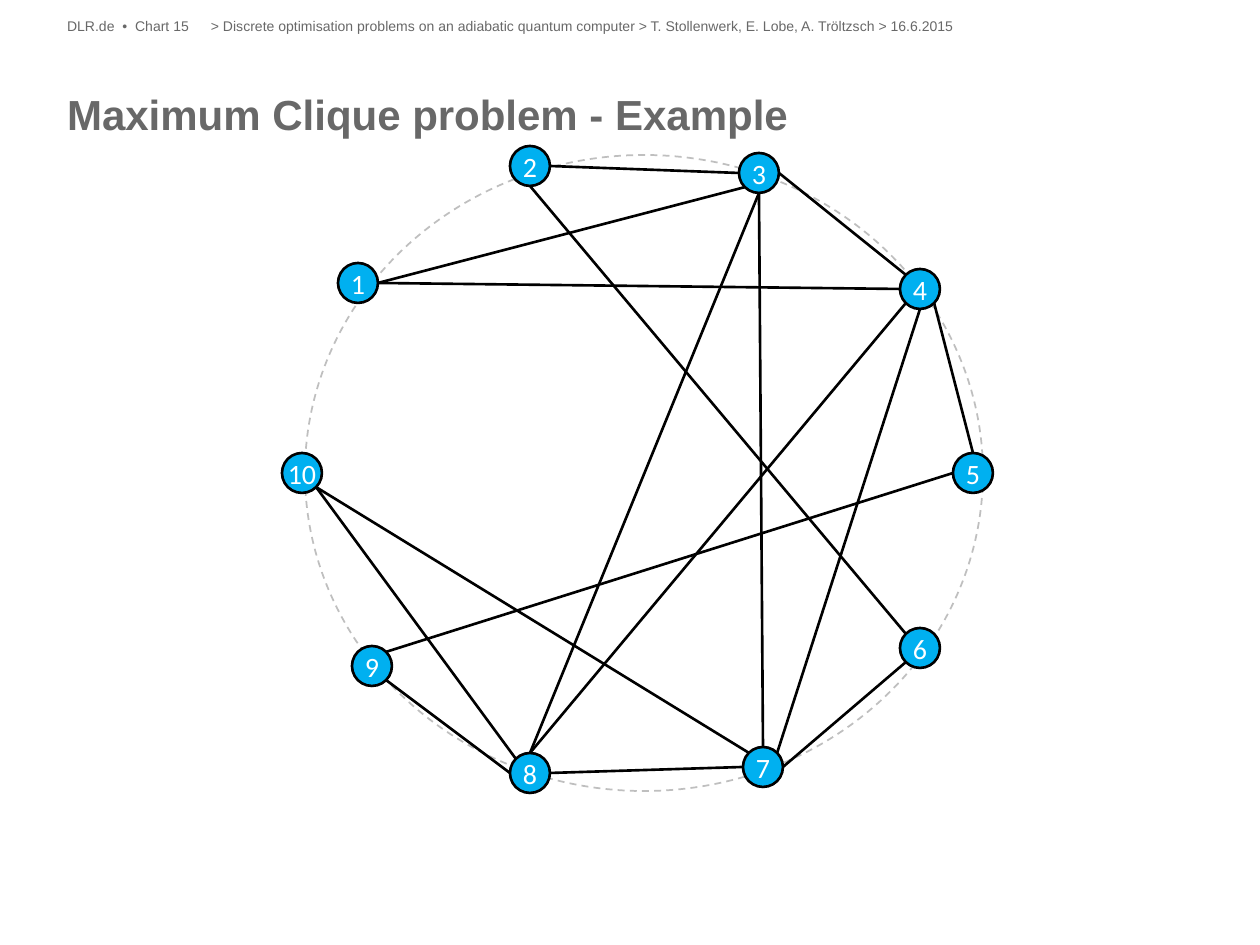
from math import sqrt

from lxml.etree import SubElement
from pptx import Presentation
from pptx.dml.color import RGBColor
from pptx.enum.dml import MSO_LINE
from pptx.enum.shapes import MSO_CONNECTOR, MSO_SHAPE
from pptx.enum.text import MSO_ANCHOR, PP_ALIGN
from pptx.oxml.ns import qn
from pptx.util import Pt

EMU_PER_PX = 914400 / 126
NODE_RADIUS = 20
DIAGONAL = NODE_RADIUS / sqrt(2)

# Points on a node's rim where edges may end, relative to its centre
RIM = {
    "N": (0, -NODE_RADIUS), "S": (0, NODE_RADIUS),
    "W": (-NODE_RADIUS, 0), "E": (NODE_RADIUS, 0),
    "NW": (-DIAGONAL, -DIAGONAL), "NE": (DIAGONAL, -DIAGONAL),
    "SW": (-DIAGONAL, DIAGONAL), "SE": (DIAGONAL, DIAGONAL),
}

NODES = {
    1: (358, 283), 2: (530, 166), 3: (759, 173), 4: (920, 289), 5: (973, 473),
    6: (920, 648), 7: (763, 767), 8: (530, 773), 9: (372, 666), 10: (302, 473),
}

EDGES = [
    (3, "S", 8, "N"), (7, "NE", 4, "S"), (6, "NW", 2, "S"), (2, "E", 3, "W"),
    (6, "SW", 7, "E"), (7, "N", 3, "S"), (7, "W", 8, "E"), (7, "NW", 10, "SE"),
    (8, "N", 4, "SW"), (3, "E", 4, "NW"), (3, "SW", 1, "E"), (1, "E", 4, "W"),
    (4, "SE", 5, "N"), (8, "W", 9, "SE"), (10, "SE", 8, "NW"), (9, "NE", 5, "W"),
]


def px(length):
    return round(length * EMU_PER_PX)


def color(hex_string):
    return RGBColor.from_string(hex_string)


class GraphSlide:
    text_color = "686868"
    node_color = "00B0F0"
    edge_color = "000000"
    ring_color = "BFBFBF"

    def __init__(self, slide):
        self.slide = slide

    def style_font(self, paragraph, size, name, hex_string, bold=False):
        font = paragraph.runs[0].font
        font.size, font.name, font.bold = Pt(size), name, bold
        font.color.rgb = color(hex_string)

    def style_line(self, line, hex_string, width):
        line.color.rgb = color(hex_string)
        line.width = Pt(width)

    def text(self, content, left, top, width, height, size, bold=False):
        box = self.slide.shapes.add_textbox(px(left), px(top), px(width), px(height))
        frame = box.text_frame
        frame.word_wrap = True
        frame.margin_left = frame.margin_right = 0
        frame.margin_top = frame.margin_bottom = 0
        frame.text = content
        self.style_font(frame.paragraphs[0], size, "Arial", self.text_color, bold)

    def ellipse(self, left, top, width, height):
        shape = self.slide.shapes.add_shape(
            MSO_SHAPE.OVAL, px(left), px(top), px(width), px(height))
        shape.shadow.inherit = False
        return shape

    def ring(self, left, top, width, height):
        shape = self.ellipse(left, top, width, height)
        shape.fill.background()
        self.style_line(shape.line, self.ring_color, 1)
        shape.line.dash_style = MSO_LINE.DASH

    def edge(self, start, start_side, end, end_side):
        ends = []
        for node, side in ((start, start_side), (end, end_side)):
            ends += [px(centre + offset) for centre, offset in zip(NODES[node], RIM[side])]
        connector = self.slide.shapes.add_connector(MSO_CONNECTOR.STRAIGHT, *ends)
        self.style_line(connector.line, self.edge_color, 1.5)
        SubElement(connector._element.spPr, qn("a:effectLst"))

    def node(self, number, x, y):
        diameter = 2 * NODE_RADIUS
        shape = self.ellipse(x - NODE_RADIUS, y - NODE_RADIUS, diameter, diameter)
        shape.fill.solid()
        shape.fill.fore_color.rgb = color(self.node_color)
        self.style_line(shape.line, self.edge_color, 1.5)
        frame = shape.text_frame
        frame.word_wrap = False
        frame.vertical_anchor = MSO_ANCHOR.MIDDLE
        frame.text = str(number)
        paragraph = frame.paragraphs[0]
        paragraph.alignment = PP_ALIGN.CENTER
        self.style_font(paragraph, 16, "Calibri", "FFFFFF")


def main():
    presentation = Presentation()
    presentation.slide_width, presentation.slide_height = px(1260), px(945)
    slide = presentation.slides.add_slide(presentation.slide_layouts[6])
    graph = GraphSlide(slide)

    # Title and header line
    graph.text("Maximum Clique problem - Example", 67, 89, 1126, 102, 24, bold=True)
    graph.text("> Discrete optimisation problems on an adiabatic quantum computer > "
               "T. Stollenwerk, E. Lobe, A. Tröltzsch > 16.6.2015", 211, 18, 982, 20, 8)
    graph.text("DLR.de  •  Chart 15", 67, 18, 144, 20, 8)

    # Graph: ring, then edges, then nodes on top
    graph.ring(305, 155, 678, 636)
    for edge in EDGES:
        graph.edge(*edge)
    for number, (x, y) in NODES.items():
        graph.node(number, x, y)

    presentation.save("out.pptx")


if __name__ == "__main__":
    main()
